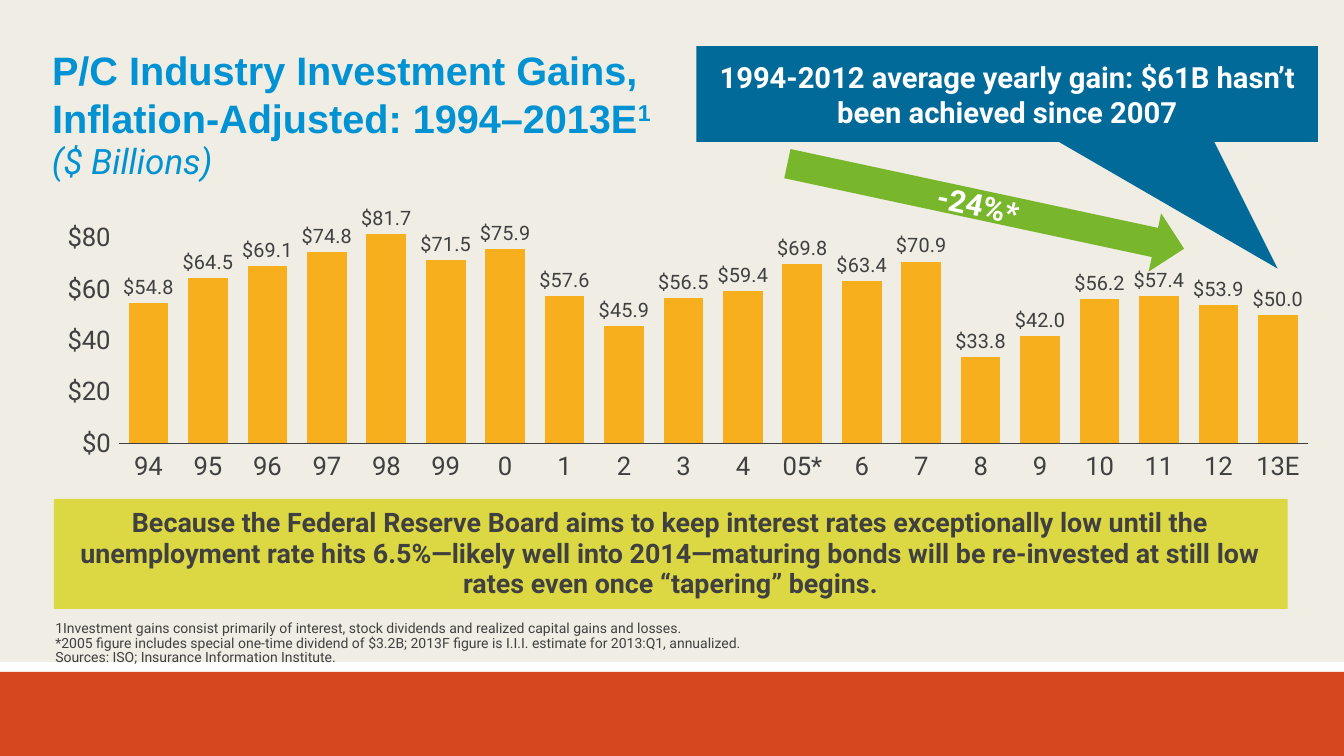
from lxml import etree
from pptx import Presentation
from pptx import util as u
from pptx.chart.data import CategoryChartData
from pptx.dml.color import RGBColor
from pptx.enum import chart as ch, shapes, text
from pptx.oxml import parse_xml
from pptx.oxml.ns import nsdecls

RED = RGBColor(0xD7, 0x47, 0x1F)
CREAM = RGBColor(0xF0, 0xED, 0xE4)
GOLD = RGBColor(0xF7, 0xAF, 0x1E)
NAVY = RGBColor(0x01, 0x6A, 0x99)
BLUE = RGBColor(0x00, 0x92, 0xD2)
GREEN = RGBColor(0x78, 0xB6, 0x2C)
LIME = RGBColor(0xDC, 0xD8, 0x44)
GRAY = RGBColor(0x40, 0x40, 0x40)
WHITE = RGBColor(0xFF, 0xFF, 0xFF)

prs = Presentation()
prs.slide_width, prs.slide_height = u.Inches(16), u.Inches(9)
slide = prs.slides.add_slide(prs.slide_layouts[5])
RECT = shapes.MSO_SHAPE.RECTANGLE


def add_block(kind, box, color):
    shape = slide.shapes.add_shape(kind, *map(u.Inches, box))
    shape.shadow.inherit = False
    shape.fill.solid()
    shape.fill.fore_color.rgb = color
    shape.line.fill.background()
    return shape


def write(shape, lines, size, color, name="Roboto", align=text.PP_ALIGN.LEFT,
          anchor=text.MSO_ANCHOR.TOP, inset=(0.1, 0.05), wrap=True,
          spacing=1.0, bold=False, italic=False):
    frame = shape.text_frame
    frame.word_wrap, frame.vertical_anchor = wrap, anchor
    frame.auto_size = text.MSO_AUTO_SIZE.NONE
    frame.margin_left = frame.margin_right = u.Inches(inset[0])
    frame.margin_top = frame.margin_bottom = u.Inches(inset[1])
    style = {"size": u.Pt(size), "name": name, "bold": bold, "italic": italic}
    for i, line in enumerate(lines):
        para = frame.paragraphs[0] if i == 0 else frame.add_paragraph()
        para.alignment, para.line_spacing = align, spacing
        para.space_before = u.Pt(0)
        # A caret marks the superscript that ends a line
        for j, part in enumerate(line.split("^")):
            run = para.add_run()
            run.text = part
            for key, value in style.items():
                setattr(run.font, key, value)
            run.font.color.rgb = color
            if j:
                run.font._element.set("baseline", "30000")


# Page bands
add_block(RECT, (0, 8, 16, 1), RED)
add_block(RECT, (0, 0, 16, 7.88), CREAM)

# Column chart
gains = {
    "94": 54.8, "95": 64.5, "96": 69.1, "97": 74.8, "98": 81.7,
    "99": 71.5, "0": 75.9, "1": 57.6, "2": 45.9, "3": 56.5,
    "4": 59.4, "05*": 69.8, "6": 63.4, "7": 70.9, "8": 33.8,
    "9": 42.0, "10": 56.2, "11": 57.4, "12": 53.9, "13E": 50.0,
}
data = CategoryChartData()
data.categories = list(gains)
data.add_series("Series 1", list(gains.values()))
chart = slide.shapes.add_chart(
    ch.XL_CHART_TYPE.COLUMN_CLUSTERED,
    *map(u.Inches, (0.29, 2.37, 15.4, 3.93)), data).chart
chart.has_legend = chart.has_title = False
plot = chart.plots[0]
plot.gap_width, plot.vary_by_categories = 50, False
plot.series[0].format.fill.solid()
plot.series[0].format.fill.fore_color.rgb = GOLD

plot.has_data_labels = True
labels, years, scale = plot.data_labels, chart.category_axis, chart.value_axis
labels.show_value = True
labels.position = ch.XL_LABEL_POSITION.OUTSIDE_END
labels.number_format, labels.number_format_is_linked = '"$"#,##0.0', False

years.major_tick_mark = ch.XL_TICK_MARK.NONE
years.tick_label_position = ch.XL_TICK_LABEL_POSITION.LOW
years.format.line.color.rgb = GRAY
years.format.line.width = u.Pt(0.75)

scale.minimum_scale, scale.maximum_scale, scale.major_unit = 0, 90, 20
scale.has_major_gridlines = False
scale.major_tick_mark = ch.XL_TICK_MARK.CROSS
scale.format.line.fill.background()
scale.tick_labels.number_format = '"$"#,##0'
scale.tick_labels.number_format_is_linked = False

fonts = ((labels.font, 17), (years.tick_labels.font, 22),
         (scale.tick_labels.font, 22))
for font, size in fonts:
    font.name, font.size = "Roboto", u.Pt(size)
    font.color.rgb = GRAY

# Fixed inner plot area
area = chart._chartSpace.chart.plotArea
for old in area.findall("{*}layout"):
    area.remove(old)
layout = parse_xml(f"<c:layout {nsdecls('c')}><c:manualLayout/></c:layout>")
marks = (("layoutTarget", "inner"), ("xMode", "edge"), ("yMode", "edge"),
         ("x", "0.073"), ("y", "0.041"), ("w", "0.919"), ("h", "0.699"))
for tag, value in marks:
    ns = etree.QName(layout).namespace
    etree.SubElement(layout[0], f"{{{ns}}}{tag}").set("val", value)
area.insert(0, layout)

# Callout and trend arrow
middle = {"align": text.PP_ALIGN.CENTER, "anchor": text.MSO_ANCHOR.MIDDLE,
          "bold": True}
note = add_block(shapes.MSO_SHAPE.RECTANGULAR_CALLOUT,
                 (8.29, 0.55, 7.4, 1.14), NAVY)
note.adjustments[0], note.adjustments[1] = 0.435, 1.822
write(note, ["1994-2012 average yearly gain: $61B hasn’t been achieved since 2007"],
      25, WHITE, inset=(0.15, 0.15), **middle)
arrow = add_block(shapes.MSO_SHAPE.RIGHT_ARROW, (9.32, 2.1, 4.83, 0.71), GREEN)
arrow.rotation = 12.1
write(arrow, ["-24%*"], 26, WHITE, inset=(0.14, 0.07), **middle)

# Title, brought in front of the bands, and its unit line
title = slide.shapes.title
title.element.getparent().append(title.element)
title.left, title.top, title.width, title.height = map(
    u.Inches, (0.52, 0.5, 14.81, 1.25))
write(title, ["P/C Industry Investment Gains,",
              "Inflation-Adjusted: 1994–2013E^1"],
      34, BLUE, name="Arial", bold=True)
unit = slide.shapes.add_textbox(*map(u.Inches, (0.52, 1.67, 2.16, 0.56)))
write(unit, ["($ Billions)"], 30, BLUE, wrap=False, spacing=0.9, italic=True)

# Footnotes
foot = slide.shapes.add_textbox(*map(u.Inches, (0.56, 7.35, 15.47, 0.62)))
write(foot, [
    "1Investment gains consist primarily of interest, stock dividends and "
    "realized capital gains and losses.",
    "*2005 figure includes special one-time dividend of $3.2B; 2013F figure "
    "is I.I.I. estimate for 2013:Q1, annualized.",
    "Sources: ISO; Insurance Information Institute.",
], 12, GRAY, anchor=text.MSO_ANCHOR.BOTTOM, spacing=0.85)

# Takeaway
banner = add_block(RECT, (0.64, 5.94, 14.69, 1.31), LIME)
write(banner, [
    "Because the Federal Reserve Board aims to keep interest rates "
    "exceptionally low until the unemployment rate hits 6.5%—likely well into "
    "2014—maturing bonds will be re-invested at still low rates even once "
    "“tapering” begins.",
], 23, GRAY, inset=(0.15, 0.1), spacing=0.95, **middle)

prs.save("out.pptx")
